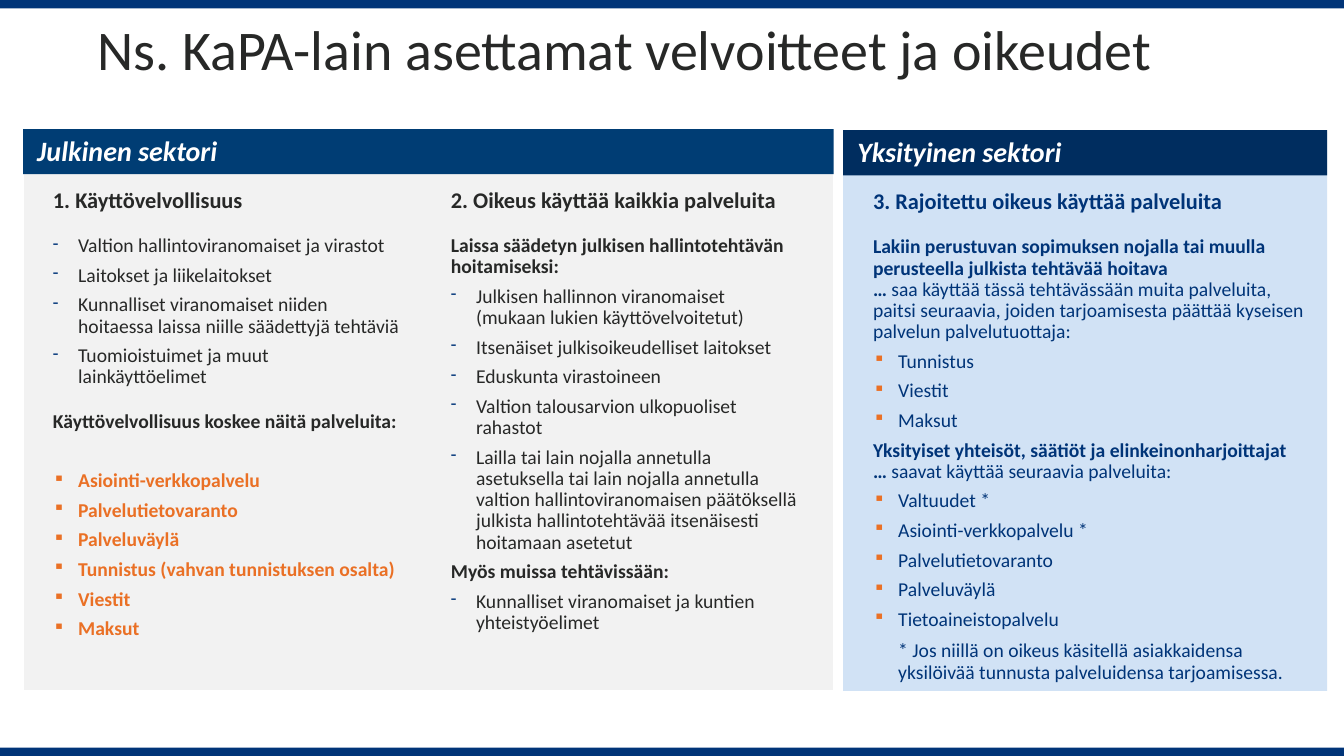
from lxml import etree
from pptx import Presentation
from pptx import util as u
from pptx.dml.color import RGBColor
from pptx.enum import shapes, text
from pptx.oxml import ns

PX = 9525
WIDTH, HEIGHT = 1280, 720
FONT = "Calibri"
INDENT = 24

BLUE = RGBColor(0x00, 0x34, 0x78)
PUBLIC_BLUE = RGBColor(0x00, 0x3D, 0x74)
PRIVATE_BLUE = RGBColor(0x00, 0x2D, 0x5F)
PALE_BLUE = RGBColor(0xD1, 0xE2, 0xF5)
GREY = RGBColor(0xF2, 0xF2, 0xF2)
DARK = RGBColor(0x27, 0x28, 0x27)
ORANGE = RGBColor(0xEA, 0x70, 0x25)
WHITE = RGBColor(0xFF, 0xFF, 0xFF)

BULLETS = {"dash": ("-", BLUE), "square": ("▪", ORANGE), "service": ("▪", ORANGE)}
SPACE_AFTER = {"heading": 16.4}

DUTY = [
    ("heading", "1. Käyttövelvollisuus"),
    ("dash", "Valtion hallintoviranomaiset ja virastot"),
    ("dash", "Laitokset ja liikelaitokset"),
    ("dash", "Kunnalliset viranomaiset niiden hoitaessa laissa niille säädettyjä tehtäviä"),
    ("dash", "Tuomioistuimet ja muut lainkäyttöelimet", 16.4),
    ("lead", "Käyttövelvollisuus koskee näitä palveluita:", 27.4),
    ("service", "Asiointi-verkkopalvelu"),
    ("service", "Palvelutietovaranto"),
    ("service", "Palveluväylä"),
    ("service", "Tunnistus (vahvan tunnistuksen osalta)"),
    ("service", "Viestit"),
    ("service", "Maksut"),
]
RIGHT = [
    ("heading", "2. Oikeus käyttää kaikkia palveluita"),
    ("lead", "Laissa säädetyn julkisen hallintotehtävän hoitamiseksi:"),
    ("dash", "Julkisen hallinnon viranomaiset (mukaan lukien käyttövelvoitetut)"),
    ("dash", "Itsenäiset julkisoikeudelliset laitokset"),
    ("dash", "Eduskunta virastoineen"),
    ("dash", "Valtion talousarvion ulkopuoliset rahastot"),
    ("dash", "Lailla tai lain nojalla annetulla asetuksella tai lain nojalla annetulla "
             "valtion hallintoviranomaisen päätöksellä julkista hallintotehtävää "
             "itsenäisesti hoitamaan asetetut"),
    ("lead", "Myös muissa tehtävissään:"),
    ("dash", "Kunnalliset viranomaiset ja kuntien yhteistyöelimet"),
]
LIMITED = [
    ("heading", "3. Rajoitettu oikeus käyttää palveluita"),
    ("lead", "Lakiin perustuvan sopimuksen nojalla tai muulla perusteella julkista "
             "tehtävää hoitava\n… |saa käyttää tässä tehtävässään muita palveluita, "
             "paitsi seuraavia, joiden tarjoamisesta päättää kyseisen palvelun "
             "palvelutuottaja:"),
    ("square", "Tunnistus"),
    ("square", "Viestit"),
    ("square", "Maksut"),
    ("lead", "Yksityiset yhteisöt, säätiöt ja elinkeinonharjoittajat\n… "
             "|saavat käyttää seuraavia palveluita:"),
    ("square", "Valtuudet *"),
    ("square", "Asiointi-verkkopalvelu *"),
    ("square", "Palvelutietovaranto"),
    ("square", "Palveluväylä"),
    ("square", "Tietoaineistopalvelu", 7.5),
    ("note", "* Jos niillä on oikeus käsitellä asiakkaidensa yksilöivää tunnusta "
             "palveluidensa tarjoamisessa."),
]


def apply(target, values):
    for name, value in values.items():
        setattr(target, name, value)


def add_panel(page, box, fill, outline=None):
    panel = page.shapes.add_shape(
        shapes.MSO_SHAPE.RECTANGLE, *[length * PX for length in box])
    panel.shadow.inherit = False
    panel.fill.solid()
    panel.fill.fore_color.rgb = fill
    if outline is None:
        panel.line.fill.background()
    else:
        panel.line.color.rgb = outline
        panel.line.width = u.Pt(1.5)


def add_frame(page, box, **values):
    frame = page.shapes.add_textbox(*[length * PX for length in box]).text_frame
    apply(frame, {"word_wrap": True, "auto_size": text.MSO_AUTO_SIZE.NONE, **values})
    return frame


def add_span(para, words, size, colour, bold=False, italic=False):
    for number, line in enumerate(words.split("\n")):
        if number:
            para.add_line_break()
        span = para.add_run()
        span.text = line
        apply(span.font, {"name": FONT, "size": u.Pt(size),
                          "bold": bold, "italic": italic})
        span.font.color.rgb = colour


def add_bullet(para, character, colour):
    properties = para._p.get_or_add_pPr()
    holder = etree.SubElement(properties, ns.qn("a:buClr"))
    etree.SubElement(holder, ns.qn("a:srgbClr"), val=str(colour))
    etree.SubElement(properties, ns.qn("a:buSzPct"), val="85000")
    etree.SubElement(properties, ns.qn("a:buChar"), char=character)


def add_column(page, box, items, colour):
    frame = add_frame(page, box)
    for number, (kind, words, *after) in enumerate(items):
        para = frame.add_paragraph() if number else frame.paragraphs[0]
        if kind in BULLETS or kind == "note":
            properties = para._p.get_or_add_pPr()
            properties.set("marL", str(INDENT * PX))
            properties.set("indent", str(-INDENT * PX if kind in BULLETS else 0))
        if kind in BULLETS:
            add_bullet(para, *BULLETS[kind])
        space = after[0] if after else SPACE_AFTER.get(kind, 6)
        apply(para, {"line_spacing": 0.9, "space_after": u.Pt(space)})
        strong, _, plain = words.partition("|")
        size = 16 if kind == "heading" else 14
        add_span(para, strong, size, ORANGE if kind == "service" else colour,
                 bold=kind in ("heading", "lead", "service"))
        if plain:
            add_span(para, plain, size, colour)


def add_sector(page, box, name, head_fill, fill, outline, colour, columns):
    left, top, width, height = box
    add_panel(page, (left, top + 2, width, height - 2), fill, outline)
    add_panel(page, (left, top, width, 43), head_fill)
    frame = add_frame(page, (left + 4, top - 1, 215, 42), word_wrap=False)
    add_span(frame.paragraphs[0], name, 20, WHITE, bold=True, italic=True)
    for offset, column_width, items in columns:
        add_column(page, (left + offset, top + 52, column_width, height - 52),
                   items, colour)


def add_title(page, box, words):
    frame = add_frame(page, box, margin_left=5 * PX, margin_top=0, margin_bottom=0,
                      vertical_anchor=text.MSO_ANCHOR.MIDDLE)
    frame.paragraphs[0].line_spacing = 0.9
    add_span(frame.paragraphs[0], words, 40, DARK)


def main():
    deck = Presentation()
    apply(deck, {"slide_width": WIDTH * PX, "slide_height": HEIGHT * PX})
    page = deck.slides.add_slide(deck.slide_layouts[6])
    for top in (0, HEIGHT - 8):
        add_panel(page, (0, top, WIDTH, 8), BLUE)
    add_title(page, (88, 20, 1104, 59),
              "Ns. KaPA-lain asettamat velvoitteet ja oikeudet")
    add_sector(page, (803, 124, 461, 534), "Yksityinen sektori", PRIVATE_BLUE,
               PALE_BLUE, None, BLUE, [(19, 443, LIMITED)])
    add_sector(page, (22, 123, 772, 535), "Julkinen sektori", PUBLIC_BLUE,
               GREY, WHITE, DARK, [(19, 350, DUTY), (398, 350, RIGHT)])
    deck.save("out.pptx")


if __name__ == "__main__":
    main()
